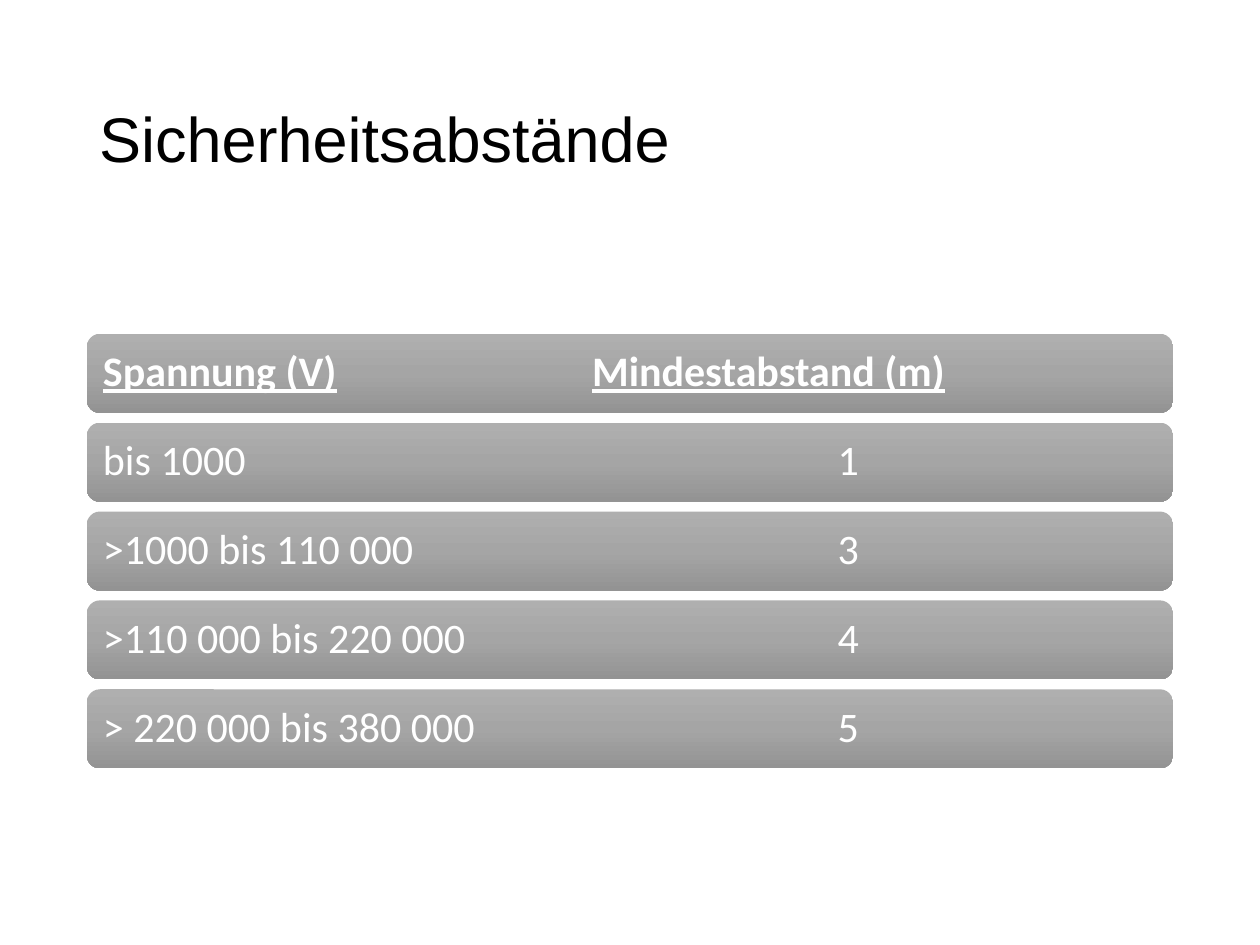
import copy

import pptx
import pptx.dml.color
import pptx.enum.shapes
import pptx.enum.text
import pptx.oxml
import pptx.oxml.ns
import pptx.util

Cm = pptx.util.Cm
Pt = pptx.util.Pt

HUES = {"title": "000000", "text": "FFFFFF",
        "top": "AFAFAF", "mid": "A5A5A5", "low": "939393"}
ROWS = [
    ("Spannung (V)", "Mindestabstand (m)"),
    ("bis 1000", "1"),
    (">1000 bis 110 000", "3"),
    (">110 000 bis 220 000", "4"),
    ("> 220 000 bis 380 000", "5"),
]
HEAD_TAB, BODY_TAB = 9.86, 14.81  # cm from the start of the text


def color(name):
    return pptx.dml.color.RGBColor.from_string(HUES[name])


def add_run(para, text, font, size, hue, strong=False):
    run = para.add_run()
    run.text = text
    run.font.name = font
    run.font.size = Pt(size)
    run.font.color.rgb = color(hue)
    run.font.bold = strong
    run.font.underline = strong


def shade(shape):
    """Fill from top to bottom with three evenly spaced stops."""
    fill = shape.fill
    fill.gradient()
    fill.gradient_angle = 270
    first = shape._element.spPr.find(".//" + pptx.oxml.ns.qn("a:gs"))
    first.addnext(copy.deepcopy(first))
    for i, (stop, hue) in enumerate(zip(fill.gradient_stops, ("top", "mid", "low"))):
        stop.position = i / 2
        stop.color.rgb = color(hue)


def add_tab(para, pos):
    props = para._p.get_or_add_pPr()
    props.append(pptx.oxml.parse_xml(
        f'<a:tabLst {pptx.oxml.ns.nsdecls("a")}>'
        f'<a:tab pos="{int(Cm(pos))}" algn="l"/></a:tabLst>'))


def add_title(slide, left, top, width, height):
    box = slide.shapes.add_textbox(Cm(left), Cm(top), Cm(width), Cm(height))
    frame = box.text_frame
    frame.word_wrap = True
    frame.vertical_anchor = pptx.enum.text.MSO_ANCHOR.MIDDLE
    para = frame.paragraphs[0]
    para.line_spacing = 0.9
    add_run(para, "Sicherheitsabstände", "Arial", 36, "title")


def add_bar(slide, left, top, width, height, row, head):
    bar = slide.shapes.add_shape(
        pptx.enum.shapes.MSO_SHAPE.ROUNDED_RECTANGLE,
        Cm(left), Cm(top), Cm(width), Cm(height))
    bar.shadow.inherit = False
    bar.line.fill.background()
    shade(bar)

    # Label, then value at the tab stop
    frame = bar.text_frame
    frame.word_wrap = True
    frame.vertical_anchor = pptx.enum.text.MSO_ANCHOR.MIDDLE
    para = frame.paragraphs[0]
    para.alignment = pptx.enum.text.PP_ALIGN.LEFT
    para.line_spacing = 0.9
    add_tab(para, HEAD_TAB if head else BODY_TAB)
    label, value = row
    add_run(para, label, "Calibri", 24, "text", head)
    add_run(para, "\t", "Calibri", 24, "text")
    add_run(para, value, "Calibri", 24, "text", head)


def add_list(slide, left, top, width, height):
    step = height / (len(ROWS) - 0.11)  # the gap is 11 % of a step
    for i, row in enumerate(ROWS):
        add_bar(slide, left, top + i * step, width, step * 0.89, row, i == 0)


def main():
    deck = pptx.Presentation()
    deck.slide_width, deck.slide_height = Cm(25.4), Cm(19.05)
    slide = deck.slides.add_slide(deck.slide_layouts[6])
    add_title(slide, 1.75, 1.02, 21.9, 3.68)
    add_list(slide, 1.75, 6.73, 21.9, 8.76)
    deck.save("out.pptx")


if __name__ == "__main__":
    main()
